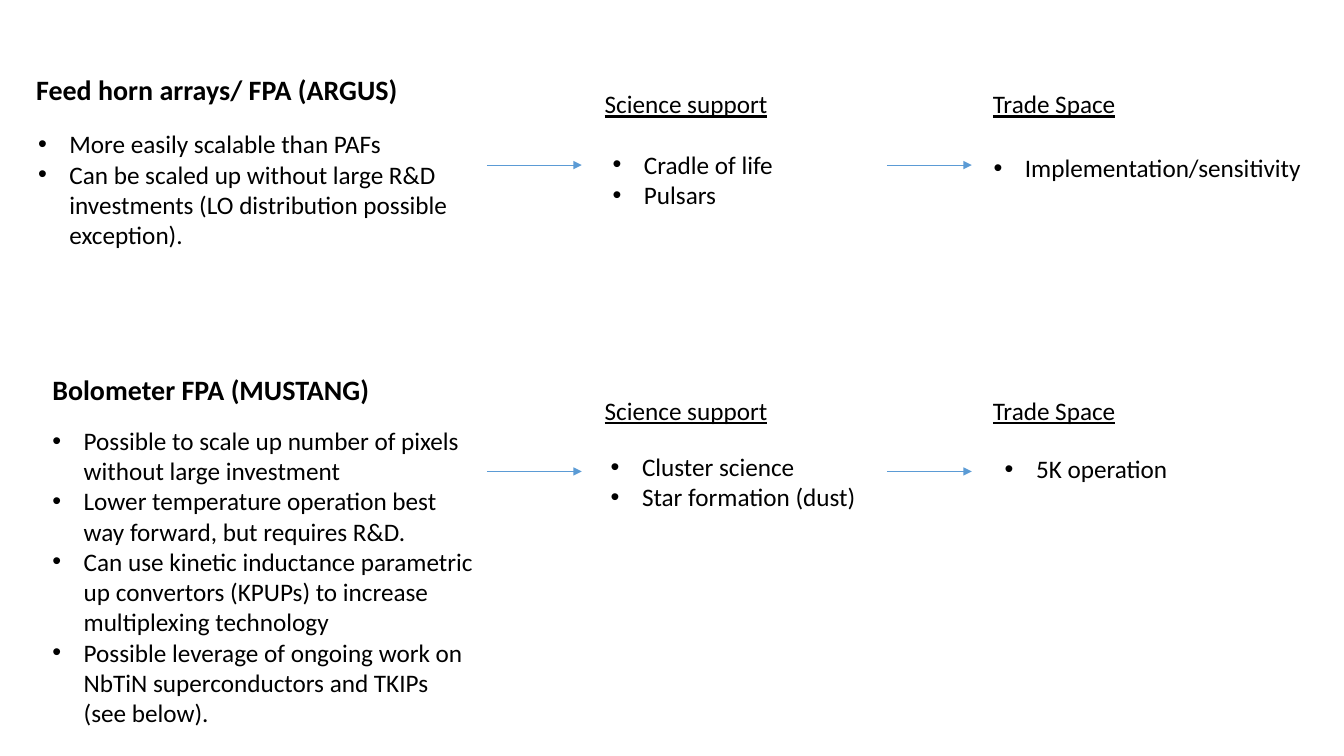
from dataclasses import dataclass

import pptx
import pptx.dml.color
import pptx.enum.shapes
import pptx.enum.text
import pptx.oxml
import pptx.oxml.ns
import pptx.util
from pptx.util import Cm

FONT = "Calibri"
BLACK = "000000"
BLUE = "5B9BD5"
BULLET_INDENT = Cm(0.79)
SCIENCE_LEFT, SCIENCE_WIDTH = 14.99, 4.67
TRADE_LEFT, TRADE_WIDTH = 24.77, 8.38
LABEL_HEIGHT = 1.02
ARROW_DROP = 2.05
ARROW_SPANS = ((12.27, 14.66), (22.35, 24.49))


@dataclass
class TextBlock:
    left: float
    top: float
    width: float
    height: float
    lines: tuple[str, ...]
    wrap: bool = True


@dataclass
class Technology:
    label_top: float
    title: TextBlock
    features: TextBlock
    science: TextBlock
    trade: TextBlock


TECHNOLOGIES = (
    Technology(
        label_top=2.11,
        title=TextBlock(0.66, 1.7, 9.7, 1.12, ("Feed horn arrays/ FPA (ARGUS)",), wrap=False),
        features=TextBlock(0.71, 3.12, 12.5, 3.33, (
            "More easily scalable than PAFs",
            "Can be scaled up without large R&D investments (LO distribution possible exception).",
        )),
        science=TextBlock(15.19, 3.63, 4.6, 1.8, ("Cradle of life", "Pulsars"), wrap=False),
        trade=TextBlock(24.79, 3.71, 8.36, 1.02, ("Implementation/sensitivity",), wrap=False),
    ),
    Technology(
        label_top=9.83,
        title=TextBlock(1.07, 9.25, 8.56, 1.12, ("Bolometer FPA (MUSTANG)",), wrap=False),
        features=TextBlock(1.07, 10.59, 11.18, 7.95, (
            "Possible to scale up number of pixels without large investment",
            "Lower temperature operation best way forward, but requires R&D.",
            "Can use kinetic inductance parametric up convertors (KPUPs) to increase "
            "multiplexing technology",
            "Possible leverage of ongoing work on NbTiN superconductors and TKIPs (see below).",
        )),
        science=TextBlock(15.14, 11.25, 6.76, 1.8,
                          ("Cluster science", "Star formation (dust)"), wrap=False),
        trade=TextBlock(25.07, 11.3, 7.75, 1.02, ("5K operation",)),
    ),
)


def color(value: str) -> pptx.dml.color.RGBColor:
    return pptx.dml.color.RGBColor.from_string(value)


def add_span(para, text: str, *, size: float = 18, bold: bool = False,
             underline: bool = False, fill: str = BLACK) -> None:
    span = para.add_run()
    span.text = text
    span.font.name = FONT
    span.font.size = pptx.util.Pt(size)
    span.font.bold = bold
    span.font.underline = underline
    span.font.color.rgb = color(fill)


def add_bullet(para) -> None:
    properties = para._p.get_or_add_pPr()
    properties.set("marL", str(BULLET_INDENT))
    properties.set("indent", str(-BULLET_INDENT))
    for tag, name, value in (("a:buFont", "typeface", "Arial"), ("a:buChar", "char", "•")):
        element = pptx.oxml.parse_xml(f"<{tag} {pptx.oxml.ns.nsdecls('a')}/>")
        element.set(name, value)
        properties.append(element)


def add_block(page, block: TextBlock, *, bulleted: bool = False, **style) -> None:
    box = page.shapes.add_textbox(
        Cm(block.left), Cm(block.top), Cm(block.width), Cm(block.height))
    frame = box.text_frame
    frame.word_wrap = block.wrap
    frame.auto_size = pptx.enum.text.MSO_AUTO_SIZE.SHAPE_TO_FIT_TEXT
    for index, line in enumerate(block.lines):
        para = frame.add_paragraph() if index else frame.paragraphs[0]
        if bulleted:
            add_bullet(para)
        add_span(para, line, **style)


def add_arrow(page, start: float, end: float, height: float) -> None:
    arrow = page.shapes.add_connector(
        pptx.enum.shapes.MSO_CONNECTOR.STRAIGHT, Cm(start), Cm(height), Cm(end), Cm(height))
    arrow.line.color.rgb = color(BLUE)
    arrow.line.width = pptx.util.Pt(0.5)
    namespace = pptx.oxml.ns.nsdecls("a")
    arrow.line._get_or_add_ln().append(
        pptx.oxml.parse_xml(f'<a:tailEnd {namespace} type="triangle"/>'))
    arrow._element.spPr.append(pptx.oxml.parse_xml(f"<a:effectLst {namespace}/>"))


def add_technology(page, technology: Technology) -> None:
    top = technology.label_top
    add_block(page, technology.title, size=20, bold=True)
    for block in (technology.features, technology.science, technology.trade):
        add_block(page, block, bulleted=True)
    add_block(page, TextBlock(SCIENCE_LEFT, top, SCIENCE_WIDTH, LABEL_HEIGHT,
                              ("Science support",), wrap=False), underline=True)
    add_block(page, TextBlock(TRADE_LEFT, top, TRADE_WIDTH, LABEL_HEIGHT,
                              ("Trade Space",)), underline=True)
    for start, end in ARROW_SPANS:
        add_arrow(page, start, end, top + ARROW_DROP)


def main() -> None:
    deck = pptx.Presentation()
    deck.slide_width, deck.slide_height = Cm(33.87), Cm(19.05)
    page = deck.slides.add_slide(deck.slide_layouts[6])
    for technology in TECHNOLOGIES:
        add_technology(page, technology)
    deck.save("out.pptx")


if __name__ == "__main__":
    main()
